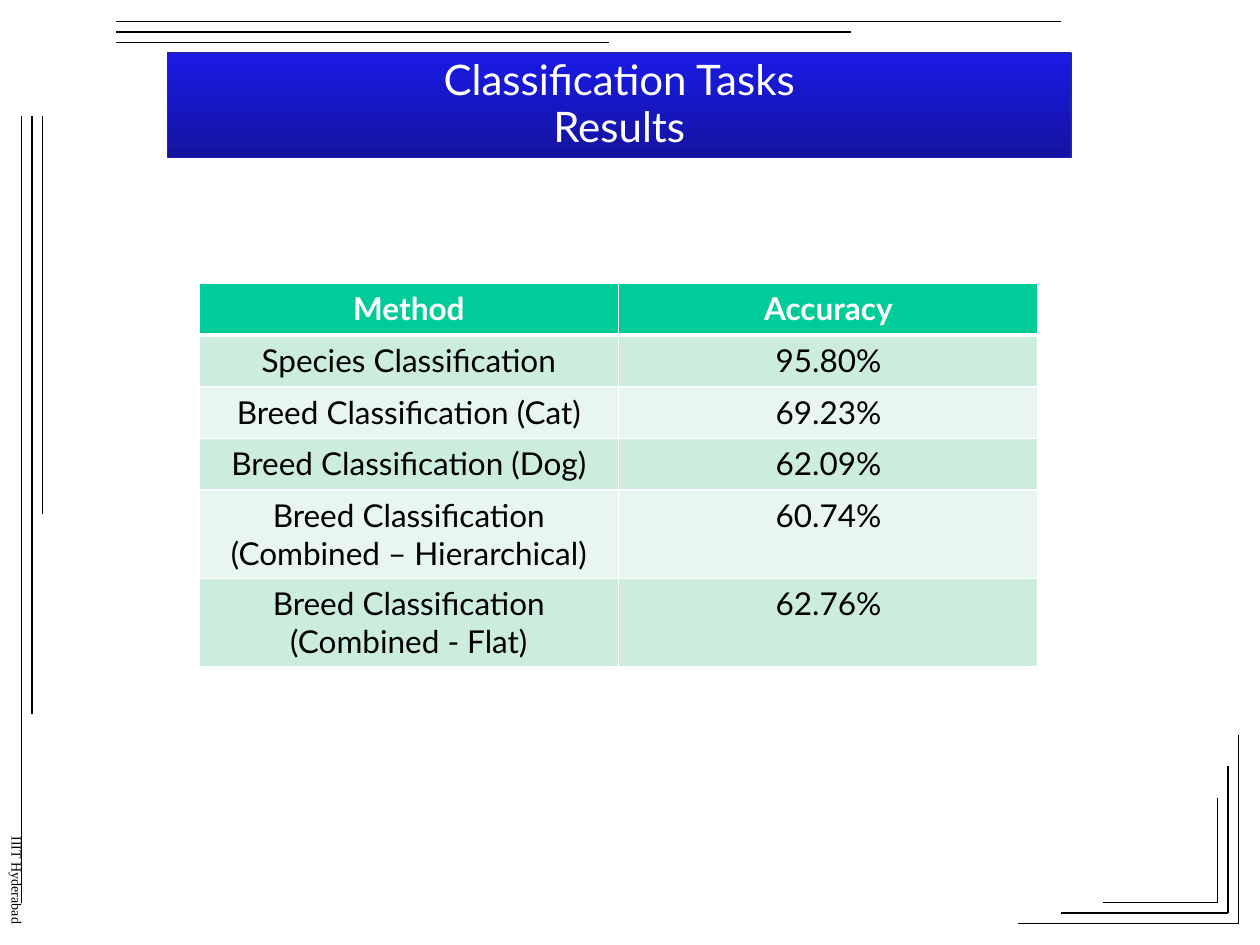
from lxml.etree import SubElement
from pptx import Presentation
from pptx.dml.color import RGBColor
from pptx.enum.shapes import MSO_CONNECTOR, MSO_SHAPE
from pptx.enum.text import MSO_ANCHOR, PP_ALIGN
from pptx.oxml.ns import qn
from pptx.util import Inches, Pt

COLORS = {
    "white": "FFFFFF", "black": "000000", "header": "00CC99",
    "band": "CCECDE", "light": "E7F6EF",
    "title_top": "1A1AE6", "title_bottom": "1414A0", "title_line": "2222BB",
}
TITLE = "Classification Tasks\nResults"
SIDE_LABEL = "IIIT Hyderabad"
ROWS = [
    ("Method", "Accuracy"),
    ("Species Classification", "95.80%"),
    ("Breed Classification (Cat)", "69.23%"),
    ("Breed Classification (Dog)", "62.09%"),
    ("Breed Classification (Combined – Hierarchical)", "60.74%"),
    ("Breed Classification (Combined - Flat)", "62.76%"),
]
ROW_HEIGHTS = [0.41] * 4 + [0.7] * 2
COL_WIDTH = 3.33

# Nested frame lines, each set stepping inwards by STEP
STEP = 1 / 12
TOP_ENDS = [8.42, 6.75, 4.83]
LEFT_ENDS = [7.17, 5.67, 4.08]
CORNERS = [(8.08, 5.83), (8.42, 6.08), (8.75, 6.33)]  # left end, top end


def rgb(name):
    return RGBColor.from_string(COLORS[name])


def write(tf, text, size=18, font="Lato", color="black", bold=False,
          align=PP_ALIGN.CENTER, spacing=None):
    p = tf.paragraphs[0]
    p.text = text
    p.alignment = align
    if spacing:
        p.line_spacing = spacing
    for r in p.runs:
        r.font.size, r.font.name, r.font.bold = Pt(size), font, bold
        r.font.color.rgb = rgb(color)


def add_line(s, x1, y1, x2, y2):
    line = s.shapes.add_connector(
        MSO_CONNECTOR.STRAIGHT, Inches(x1), Inches(y1), Inches(x2), Inches(y2))
    line.line.color.rgb = rgb("black")
    line.line.width = Pt(0.75)
    SubElement(line._element.spPr, qn("a:effectLst"))


def add_frame(s):
    for i, (right, bottom) in enumerate(zip(TOP_ENDS, LEFT_ENDS)):
        near = 0.17 + i * STEP
        add_line(s, 0.92, near, right, near)
        add_line(s, near, 0.92, near, bottom)
    for i, (left, top) in enumerate(CORNERS):
        x, y = 9.83 - i * STEP, 7.33 - i * STEP
        add_line(s, left, y, x, y)
        add_line(s, x, top, x, y)


def add_side_label(s):
    box = s.shapes.add_textbox(Inches(-0.08), Inches(6.58), Inches(0.32), Inches(0.92))
    tf = box.text_frame
    tf.word_wrap = True
    tf.margin_top = Inches(0.06)
    tf._txBody.bodyPr.set("vert", "eaVert")
    write(tf, SIDE_LABEL, size=8, font="Times New Roman",
          align=PP_ALIGN.LEFT, spacing=0.93)


def add_title(s):
    sp = s.shapes.add_shape(
        MSO_SHAPE.RECTANGLE, Inches(1.33), Inches(0.42), Inches(7.17), Inches(0.83))
    sp.shadow.inherit = False
    sp.fill.gradient()
    sp.fill.gradient_angle = 270
    for stop, name in zip(sp.fill.gradient_stops, ("title_top", "title_bottom")):
        stop.color.rgb = rgb(name)
    sp.line.color.rgb = rgb("title_line")
    sp.line.width = Pt(0.75)
    tf = sp.text_frame
    tf.word_wrap = True
    tf.vertical_anchor = MSO_ANCHOR.MIDDLE
    write(tf, TITLE, size=24, color="white", spacing=0.93)


def set_borders(cell, **widths):
    """Draw white borders; widths are points keyed by lnL, lnR, lnT, lnB."""
    tcPr = cell._tc.get_or_add_tcPr()
    for i, (side, width) in enumerate(widths.items()):
        ln = tcPr.makeelement(qn(f"a:{side}"), {"w": str(Pt(width))})
        fill = SubElement(ln, qn("a:solidFill"))
        SubElement(fill, qn("a:srgbClr"), val=COLORS["white"])
        tcPr.insert(i, ln)


def add_results(s):
    table = s.shapes.add_table(
        len(ROWS), 2, Inches(1.58), Inches(2.25),
        Inches(2 * COL_WIDTH), Inches(sum(ROW_HEIGHTS))).table
    for col in table.columns:
        col.width = Inches(COL_WIDTH)
    for i, (row, height) in enumerate(zip(ROWS, ROW_HEIGHTS)):
        table.rows[i].height = Inches(height)
        head = i == 0
        for j, text in enumerate(row):
            cell = table.cell(i, j)
            cell.fill.solid()
            cell.fill.fore_color.rgb = rgb(
                "header" if head else "band" if i % 2 else "light")
            set_borders(cell, lnL=1, lnR=1, lnT=3 if i == 1 else 1, lnB=3 if head else 1)
            write(cell.text_frame, text, color="white" if head else "black", bold=head)


def main():
    prs = Presentation()
    prs.slide_width, prs.slide_height = Inches(10), Inches(7.5)
    s = prs.slides.add_slide(prs.slide_layouts[6])
    add_frame(s)
    add_side_label(s)
    add_title(s)
    add_results(s)
    prs.save("out.pptx")


if __name__ == "__main__":
    main()
